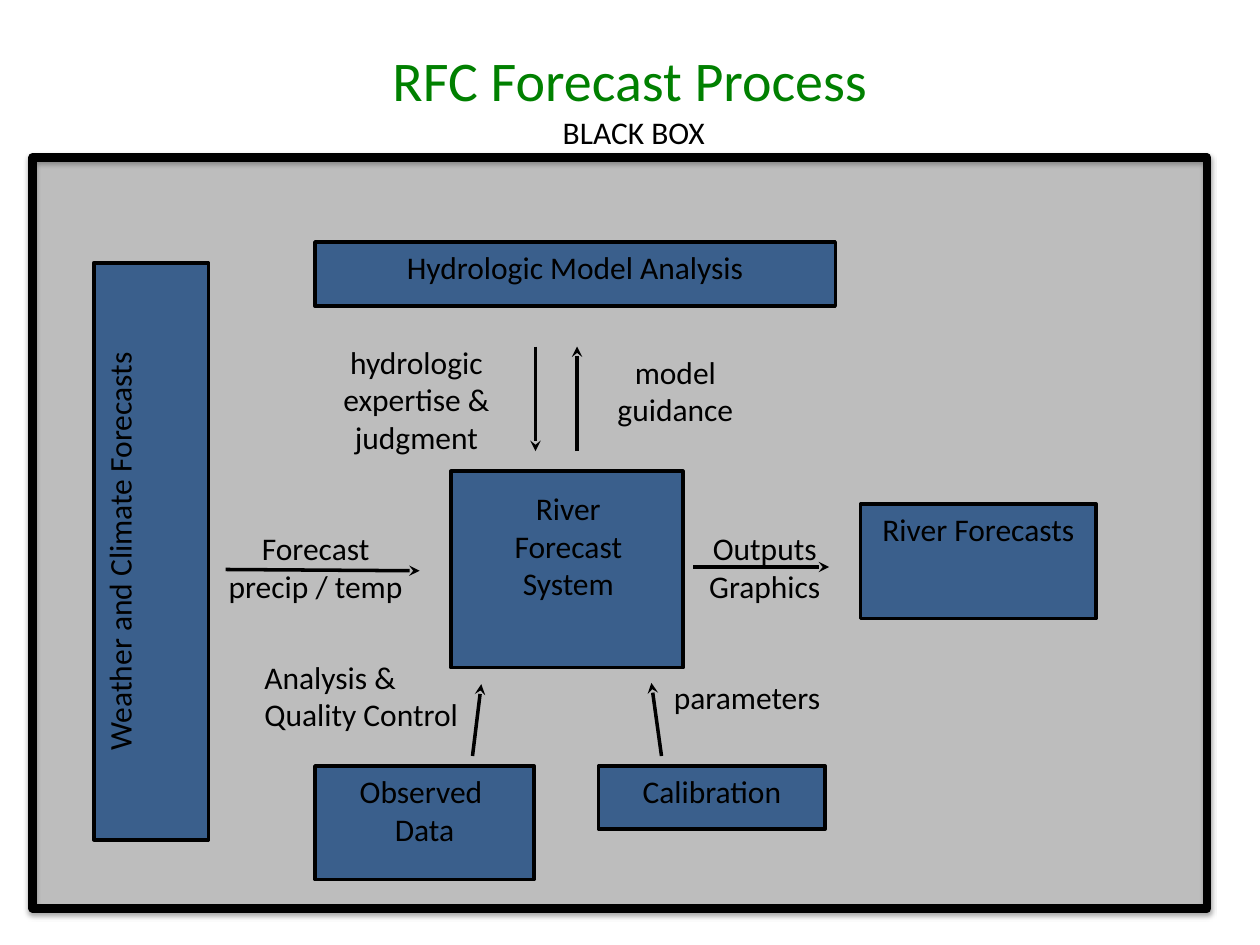
import pptx
import pptx.dml.color
import pptx.enum.shapes
import pptx.enum.text
import pptx.oxml
import pptx.oxml.ns
import pptx.util
from pptx.util import Inches

BLACK = "000000"
BLUE = "4F81BD"
GREEN = "008000"
CENTER = pptx.enum.text.PP_ALIGN.CENTER
LEFT = pptx.enum.text.PP_ALIGN.LEFT
RECTANGLE = pptx.enum.shapes.MSO_SHAPE.RECTANGLE
STRAIGHT = pptx.enum.shapes.MSO_CONNECTOR.STRAIGHT
TOP = pptx.enum.text.MSO_ANCHOR.TOP
MIDDLE = pptx.enum.text.MSO_ANCHOR.MIDDLE
NAMESPACE = pptx.oxml.ns.nsdecls("a")


def color(value):
    return pptx.dml.color.RGBColor.from_string(value)


def append_xml(parent, xml):
    parent.append(pptx.oxml.parse_xml(xml))


def set_line(shape, width):
    shape.line.color.rgb = color(BLACK)
    shape.line.width = pptx.util.Pt(width)


def write_text(shape, lines, size=18, text_color=BLACK, align=CENTER, anchor=TOP, wrap=False):
    frame = shape.text_frame
    frame.word_wrap = wrap
    frame.vertical_anchor = anchor
    for index, line in enumerate(lines):
        paragraph = frame.add_paragraph() if index else frame.paragraphs[0]
        paragraph.alignment = align
        run = paragraph.add_run()
        run.text = line
        run.font.name = "Calibri"
        run.font.size = pptx.util.Pt(size)
        run.font.color.rgb = color(text_color)


def add_title(slide, box, text):
    title = slide.shapes.title
    title.left, title.top, title.width, title.height = map(Inches, box)
    write_text(title, [text], size=32, text_color=GREEN, anchor=MIDDLE, wrap=True)


def add_box(slide, box, lines=(), rotation=0):
    shape = slide.shapes.add_shape(RECTANGLE, *map(Inches, box))
    shape.shadow.inherit = False
    shape.rotation = rotation
    shape.fill.solid()
    shape.fill.fore_color.rgb = color(BLUE)
    set_line(shape, 2)
    write_text(shape, lines)


def add_label(slide, box, lines, align=CENTER, wrap=False):
    label = slide.shapes.add_textbox(*map(Inches, box))
    write_text(label, lines, align=align, wrap=wrap)


def add_arrow(slide, start, end):
    arrow = slide.shapes.add_connector(STRAIGHT, *map(Inches, start + end))
    set_line(arrow, 2)
    append_xml(arrow.line._get_or_add_ln(), f'<a:tailEnd {NAMESPACE} type="stealth"/>')
    append_xml(arrow._element.spPr, f"<a:effectLst {NAMESPACE}/>")


def add_black_box(slide, box):
    left, top, width, height = box
    shape = slide.shapes.add_shape(RECTANGLE, *map(Inches, box))
    shape.fill.solid()
    shape.fill.fore_color.rgb = color(BLACK)
    fill_color = shape._element.spPr.find(".//" + pptx.oxml.ns.qn("a:srgbClr"))
    append_xml(fill_color, f'<a:alpha {NAMESPACE} val="20000"/>')
    set_line(shape, 5)
    blur, distance = pptx.util.Pt(3.1), pptx.util.Pt(1.8)
    append_xml(
        shape._element.spPr,
        f'<a:effectLst {NAMESPACE}><a:outerShdw blurRad="{blur}" dist="{distance}" '
        f'dir="5400000" rotWithShape="0"><a:srgbClr val="{BLACK}">'
        '<a:alpha val="35000"/></a:srgbClr></a:outerShdw></a:effectLst>',
    )
    add_label(slide, (left + 2.32, top - 0.4, 4.9, 0.4), ["BLACK BOX"], wrap=True)


def add_process(slide, box):
    left, top = box[:2]

    def place(x, y, *size):
        return (left + x, top + y) + size

    boxes = [
        ((-1.35, 2.67, 4.58, 0.91), ["Weather and Climate Forecasts"], 270),
        ((3.32, 2.49, 1.84, 1.56), [], 0),
        ((2.24, 4.83, 1.74, 0.9), ["Observed ", "Data"], 0),
        ((4.49, 4.83, 1.8, 0.5), ["Calibration"], 0),
        ((2.24, 0.67, 4.13, 0.51), ["Hydrologic Model Analysis"], 0),
        ((6.57, 2.75, 1.87, 0.91), ["River Forecasts"], 0),
    ]
    labels = [
        ((1.42, 2.9, 1.65, 0.7), ["Forecast", "precip / temp"], CENTER),
        ((3.49, 2.58, 1.52, 1.31), ["River", "Forecast", "System"], CENTER),
        ((4.99, 4.08, 1.47, 0.4), ["parameters"], LEFT),
        ((1.74, 3.92, 1.89, 0.71), ["Analysis &", "Quality Control"], LEFT),
        ((4.49, 1.5, 1.22, 0.7), ["model", "guidance"], CENTER),
        ((2.32, 1.42, 1.45, 1), ["hydrologic", "expertise &", "judgment"], CENTER),
        ((5.21, 2.9, 1.2, 0.7), ["Outputs", "Graphics"], CENTER),
    ]
    arrows = [
        ((1.53, 3.27), (3.07, 3.28)),
        ((4.99, 4.75), (4.91, 4.17)),
        ((3.49, 4.75), (3.56, 4.18)),
        ((4.32, 2.33), (4.32, 1.5)),
        ((3.99, 1.5), (3.99, 2.33)),
        ((5.24, 3.25), (6.32, 3.25)),
    ]
    for position, lines, rotation in boxes:
        add_box(slide, place(*position), lines, rotation)
    for position, lines, align in labels:
        add_label(slide, place(*position), lines, align)
    for start, end in arrows:
        add_arrow(slide, place(*start), place(*end))


def main():
    presentation = pptx.Presentation()
    presentation.slide_width = Inches(10)
    presentation.slide_height = Inches(7.5)
    slide = presentation.slides.add_slide(presentation.slide_layouts[5])
    frame = (0.26, 1.25, 9.32, 5.96)
    add_title(slide, (0, 0, 10, 1.25), "RFC Forecast Process")
    add_process(slide, frame)
    add_black_box(slide, frame)
    presentation.save("out.pptx")


if __name__ == "__main__":
    main()
